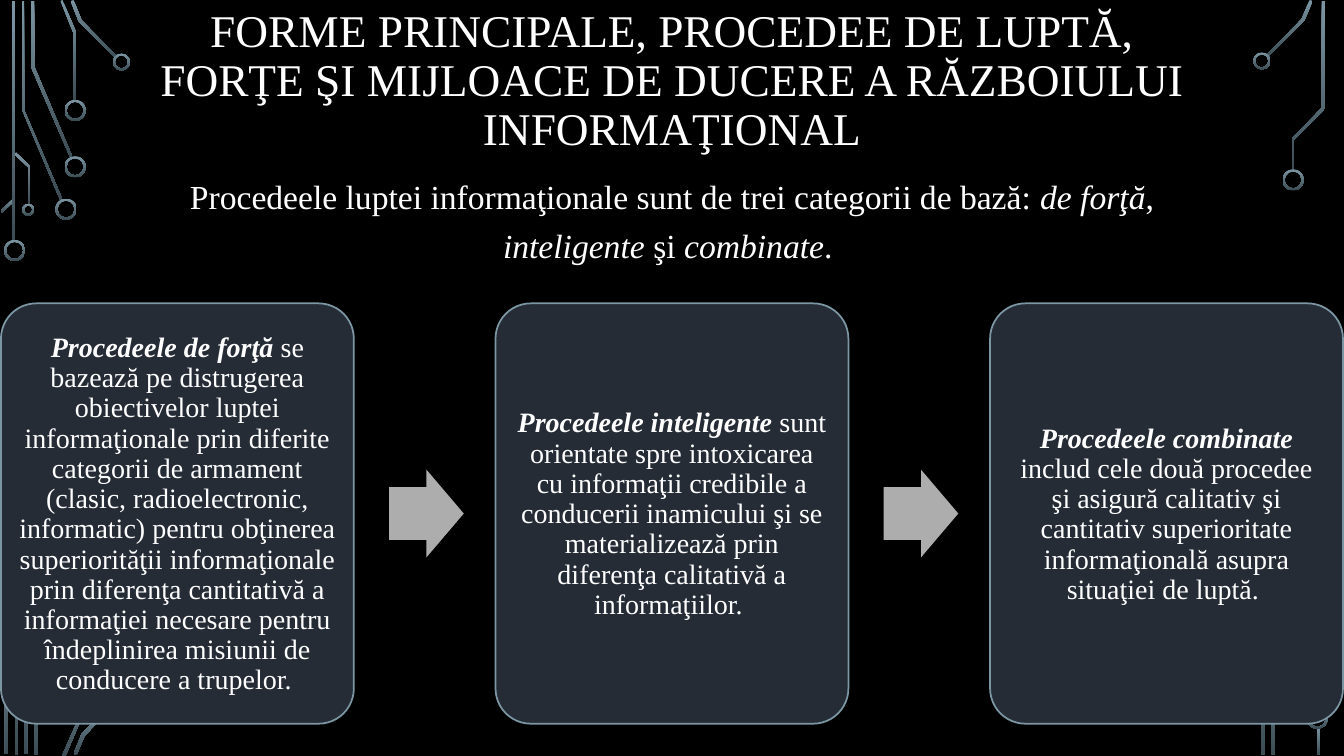
from pptx import Presentation
from pptx.dml.color import RGBColor
from pptx.enum import shapes, text
from pptx.util import Inches, Pt

MSO = shapes.MSO_SHAPE
WHITE, BLACK, CARD, EDGE, ARROW = "FFFFFF", "000000", "252C36", "7C96A3", "ADADAE"
TRACE_TOP, TRACE_BOTTOM = "7C96A3", "3B4C54"


def paint(fill, *colours):
    """Fill with one colour, or with two as a gradient from top to bottom."""
    if len(colours) == 1:
        fill.solid()
        fill.fore_color.rgb = RGBColor.from_string(colours[0])
        return
    fill.gradient()
    fill.gradient_angle = 270
    for stop, colour in zip(fill.gradient_stops, colours):
        stop.color.rgb = RGBColor.from_string(colour)


def add_text(box, runs, size, spacing, anchor, inset=(0.1, 0.05)):
    """Add one centred paragraph; runs are (text, style), style from "b", "i" and "n" (new line first)."""
    tf = s.shapes.add_textbox(*map(Inches, box)).text_frame
    tf.word_wrap = True
    tf.vertical_anchor = anchor
    tf.margin_left = tf.margin_right = Inches(inset[0])
    tf.margin_top = tf.margin_bottom = Inches(inset[1])
    p = tf.paragraphs[0]
    p.alignment = text.PP_ALIGN.CENTER
    p.line_spacing = spacing
    for words, style in runs:
        if "n" in style:
            p.add_line_break()
        r = p.add_run()
        r.text = words
        r.font.name = "Times New Roman"
        r.font.size = Pt(size)
        r.font.bold = "b" in style
        r.font.italic = "i" in style
        r.font.color.rgb = RGBColor.from_string(WHITE)


prs = Presentation()
prs.slide_width, prs.slide_height = Inches(13.33), Inches(7.5)
s = prs.slides.add_slide(prs.slide_layouts[6])
paint(s.background.fill, BLACK)

# Circuit traces along both sides
traces = [
    [(0.6, 1.99), (0.22, 1.09), (0.22, 0.01), (0.24, 0.01), (0.24, 1.09), (0.62, 1.98)],
    [(0.7, 1.57), (0.31, 0.67), (0.31, 0.01), (0.34, 0.01), (0.34, 0.66), (0.72, 1.56)],
    [(0.76, 1), (0.73, 1), (0.73, 0.33), (0.6, 0.01), (0.62, 0), (0.76, 0.33)],
    [(1.15, 0.58), (0.78, 0.21), (0.7, 0.01), (0.73, 0), (0.81, 0.2), (1.16, 0.56)],
    [(0.02, 2.11), (0.01, 2.09), (0.13, 1.97), (0.15, 1.99)],
    [(0.15, 4.41), (0.13, 4.41), (0.13, 4.02), (-0.01, 3.9), (0.01, 3.88), (0.15, 4)],
    [(0.3, 2.03), (0.28, 2.03), (0.28, 1.66), (0.14, 1.53), (0.16, 1.51), (0.3, 1.65)],
    [(0.27, 7.48), (0.24, 7.48), (0.24, 6.4), (0.62, 5.51), (0.65, 5.52), (0.27, 6.41)],
    [(0.08, 7.48), (0.05, 7.48), (0.05, 6.41), (-0.02, 6.16), (0.02, 6.15), (0.08, 6.41)],
    [(0.37, 7.49), (0.34, 7.49), (0.34, 6.82), (0.72, 5.93), (0.75, 5.94), (0.37, 6.83)],
    [(0.65, 7.5), (0.62, 7.49), (0.76, 7.17), (0.76, 6.5), (0.79, 6.5), (0.79, 7.17)],
    [(0.76, 7.49), (0.73, 7.48), (0.81, 7.28), (1.17, 6.92), (1.19, 6.94), (0.84, 7.3)],
    [(12.58, 0.56), (12.56, 0.55), (12.91, 0.19), (12.99, 0), (13.02, 0.01), (12.94, 0.2)],
    [(12.64, 7.49), (12.61, 7.49), (12.61, 6.93), (12.92, 6.23), (12.94, 6.24), (12.64, 6.94)],
    [(12.83, 1.69), (12.81, 1.69), (12.81, 1.38), (13.11, 1.07),
     (13.11, 0.01), (13.14, 0.01), (13.14, 1.08), (12.83, 1.39)],
    [(12.54, 7.49), (12.51, 7.49), (12.51, 6.13), (12.82, 5.83),
     (12.82, 5.52), (12.85, 5.52), (12.85, 5.84), (12.54, 6.14)],
]
bars = [(0.12, 0.01, 2.39), (0.15, 5.1, 2.39), (13.06, 7.21, 0.28)]
rings = [
    (0.04, 2.38, 0.21), (0.03, 4.4, 0.21), (0.55, 1.97, 0.21), (0.64, 1.55, 0.21),
    (0.64, 0.99, 0.21), (1.12, 0.53, 0.17), (0.22, 2.02, 0.12), (12.43, 0.52, 0.17),
    (12.72, 1.68, 0.21), (12.96, 7.02, 0.21),
]
circuit = []
for points in traces:
    start, *rest = [(Inches(x), Inches(y)) for x, y in points]
    builder = s.shapes.build_freeform(*start)
    builder.add_line_segments(rest)
    circuit.append(builder.convert_to_shape())
for x, y, height in bars:
    circuit.append(s.shapes.add_shape(MSO.RECTANGLE, *map(Inches, (x, y, 0.03, height))))
for x, y, size in rings:
    ring = s.shapes.add_shape(MSO.DONUT, *map(Inches, (x, y, size, size)))
    ring.adjustments[0] = 0.02 / size
    circuit.append(ring)
for sp in circuit:
    sp.shadow.inherit = False
    paint(sp.fill, TRACE_TOP, TRACE_BOTTOM)
    sp.line.fill.background()

# Title and introduction
add_text((1.25, 0, 10.83, 1.62), [
    ("FORME PRINCIPALE, PROCEDEE DE LUPTĂ,", ""),
    ("FORŢE ŞI MIJLOACE DE DUCERE A RĂZBOIULUI INFORMAŢIONAL", "n"),
], 32.4, 0.9, text.MSO_ANCHOR.MIDDLE)
add_text((1.25, 1.62, 10.83, 1.08), [
    ("Procedeele luptei informaţionale sunt de trei categorii de bază: ", ""),
    ("de forţă", "i"), (", ", ""), ("inteligente", "i"), (" şi ", ""), ("combinate", "i"), (". ", ""),
], 24, 1.2, text.MSO_ANCHOR.TOP)

# Three cards with an arrow between neighbours
cards = [
    ("Procedeele de forţă ",
     "se bazează pe distrugerea obiectivelor luptei informaţionale prin diferite categorii de "
     "armament (clasic, radioelectronic, informatic) pentru obţinerea superiorităţii "
     "informaţionale prin diferenţa cantitativă a informaţiei necesare pentru îndeplinirea "
     "misiunii de conducere a trupelor. "),
    ("Procedeele inteligente ",
     "sunt orientate spre intoxicarea cu informaţii credibile a conducerii inamicului şi se "
     "materializează prin diferenţa calitativă a informaţiilor. "),
    ("Procedeele combinate ",
     "includ cele două procedee şi asigură calitativ şi cantitativ superioritate "
     "informaţională asupra situaţiei de luptă. "),
]
for i, (name, description) in enumerate(cards):
    left = 0.01 + i * 4.905
    card = s.shapes.add_shape(MSO.ROUNDED_RECTANGLE, *map(Inches, (left, 3.01, 3.5, 4.17)))
    card.adjustments[0] = 0.1
    card.shadow.inherit = False
    paint(card.fill, CARD)
    paint(card.line.fill, EDGE)
    card.line.width = Pt(1.25)
    add_text((left + 0.1, 3.12, 3.3, 3.97), [(name, "bi"), (description, "")],
             20, 0.9, text.MSO_ANCHOR.MIDDLE, (0.08, 0.08))
    if i < len(cards) - 1:
        arrow = s.shapes.add_shape(MSO.RIGHT_ARROW, *map(Inches, (left + 3.85, 4.66, 0.74, 0.87)))
        arrow.adjustments[0], arrow.adjustments[1] = 0.6, 0.5
        arrow.shadow.inherit = False
        paint(arrow.fill, ARROW)
        arrow.line.fill.background()

prs.save("out.pptx")
